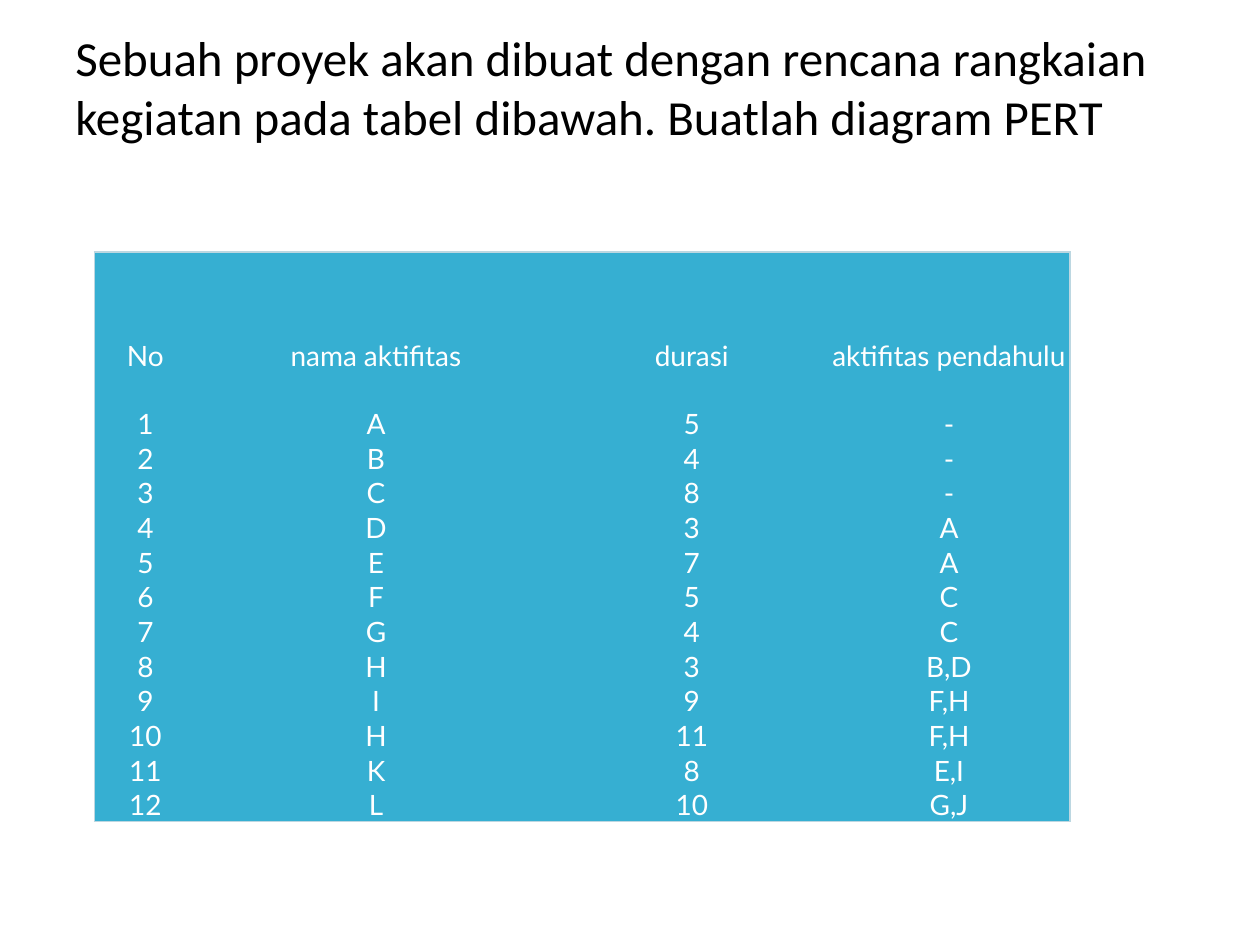
import pptx
import pptx.dml.color
import pptx.enum.text
import pptx.oxml
import pptx.oxml.ns
import pptx.util
from pptx.util import Cm

ANCHOR = pptx.enum.text.MSO_ANCHOR
ALIGN = pptx.enum.text.PP_ALIGN

TITLE = ("Sebuah proyek akan dibuat dengan rencana rangkaian kegiatan "
         "pada tabel dibawah. Buatlah diagram PERT")
HEADER = ("No", "nama aktifitas", "durasi", "aktifitas pendahulu")
ACTIVITIES = [
    ("A", 5, "-"), ("B", 4, "-"), ("C", 8, "-"), ("D", 3, "A"),
    ("E", 7, "A"), ("F", 5, "C"), ("G", 4, "C"), ("H", 3, "B,D"),
    ("I", 9, "F,H"), ("H", 11, "F,H"), ("K", 8, "E,I"), ("L", 10, "G,J"),
]
COLUMN_WIDTHS = (2.06, 7.24, 5.49, 4.88)
ROW_HEIGHTS = [1.07, 2.03] + [0.7] * len(ACTIVITIES)


def rgb(value):
    return pptx.dml.color.RGBColor.from_string(value)


class SlideBuilder:
    title_font, title_size, title_color = "Calibri", 28, "000000"
    table_font, table_size, table_color = "Lato", 16, "FFFFFF"
    table_fill, border_color, border_width = "36AFD2", "BCD7E1", 0.75

    def __init__(self, slide):
        self.s = slide

    def run(self, p, text, font, size, color):
        r = p.add_run()
        r.text = text
        r.font.name = font
        r.font.size = pptx.util.Pt(size)
        r.font.bold = False
        r.font.color.rgb = rgb(color)

    def title(self, text, left, top, width, height):
        sp = self.s.shapes.add_textbox(Cm(left), Cm(top), Cm(width), Cm(height))
        tf = sp.text_frame
        tf.word_wrap = True
        tf.vertical_anchor = ANCHOR.TOP
        tf.margin_top = tf.margin_bottom = 0
        self.run(tf.paragraphs[0], text,
                 self.title_font, self.title_size, self.title_color)

    def border(self, cell, side, visible):
        """Draw one side (L, R, T or B) of a cell, or switch it off."""
        tc_pr = cell._tc.get_or_add_tcPr()
        fill = (f'<a:solidFill><a:srgbClr val="{self.border_color}"/></a:solidFill>'
                if visible else "<a:noFill/>")
        width = pptx.util.Pt(self.border_width)
        tc_pr.append(pptx.oxml.parse_xml(
            f'<a:ln{side} {pptx.oxml.ns.nsdecls("a")} w="{width}">{fill}</a:ln{side}>'))

    def table(self, rows, left, top, widths, heights):
        """Rows fill the table from its second row; the first is one merged band."""
        n_rows, n_cols = len(heights), len(widths)
        frame = self.s.shapes.add_table(n_rows, n_cols, Cm(left), Cm(top),
                                        Cm(sum(widths)), Cm(sum(heights)))
        table = frame.table
        table.first_row = table.horz_banding = False
        for column, width in zip(table.columns, widths):
            column.width = Cm(width)
        for row, height in zip(table.rows, heights):
            row.height = Cm(height)
        table.cell(0, 0).merge(table.cell(0, n_cols - 1))

        for i in range(n_rows):
            for j in range(n_cols):
                cell = table.cell(i, j)
                last_column = j + cell.span_width == n_cols
                edges = {"L": j == 0, "R": last_column,
                         "T": i == 0, "B": i == n_rows - 1}
                for side, visible in edges.items():
                    self.border(cell, side, visible)
                cell.fill.solid()
                cell.fill.fore_color.rgb = rgb(self.table_fill)
                if i > 0:
                    anchor = ANCHOR.MIDDLE if i == 1 else ANCHOR.BOTTOM
                    self.cell_text(cell, str(rows[i - 1][j]), anchor)

    def cell_text(self, cell, text, anchor):
        cell.vertical_anchor = anchor
        cell.margin_left = cell.margin_right = cell.margin_top = Cm(0.02)
        cell.margin_bottom = 0
        p = cell.text_frame.paragraphs[0]
        p.alignment = ALIGN.CENTER
        self.run(p, text, self.table_font, self.table_size, self.table_color)


def main():
    prs = pptx.Presentation()
    prs.slide_width, prs.slide_height = Cm(25.4), Cm(19.05)
    builder = SlideBuilder(prs.slides.add_slide(prs.slide_layouts[6]))
    builder.title(TITLE, 1.27, 0.56, 23.29, 3.18)
    rows = [HEADER] + [(n, *activity) for n, activity in enumerate(ACTIVITIES, 1)]
    builder.table(rows, 1.9, 5.08, COLUMN_WIDTHS, ROW_HEIGHTS)
    prs.save("out.pptx")


if __name__ == "__main__":
    main()
